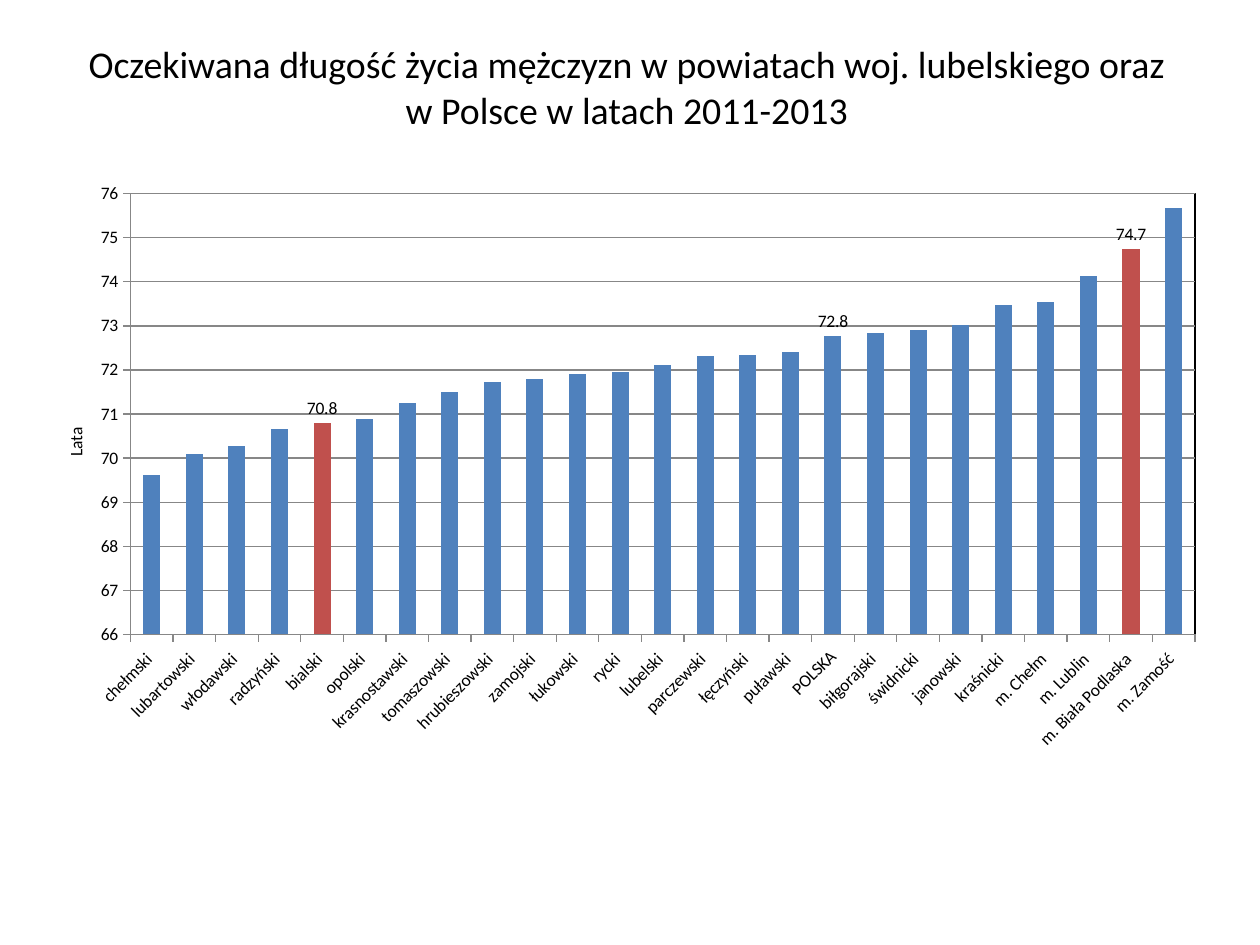
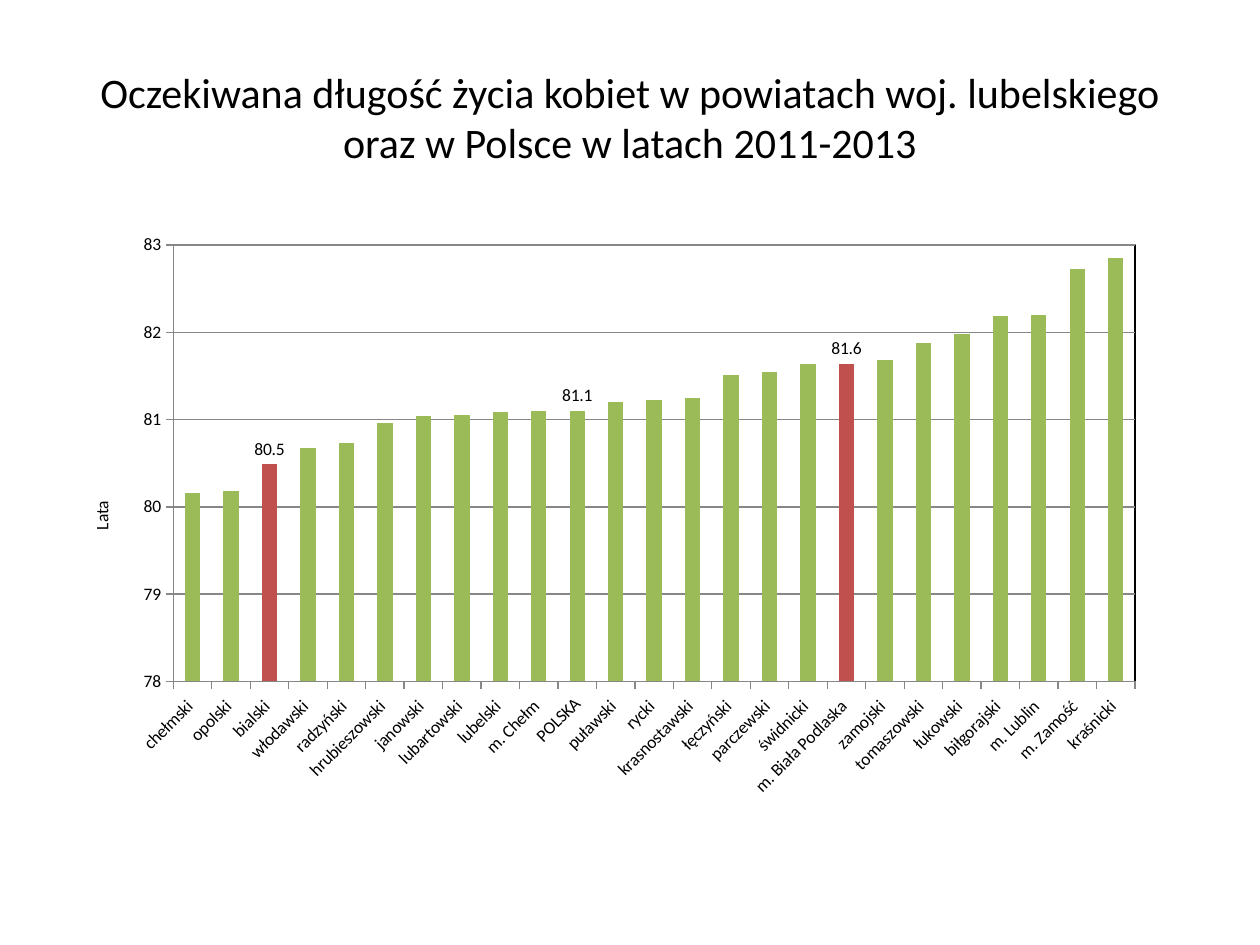
from dataclasses import dataclass

from lxml import etree
from pptx import Presentation
from pptx import util as u
from pptx.chart.data import CategoryChartData
from pptx.dml.color import RGBColor
from pptx.enum import chart as ch, text
from pptx.oxml import parse_xml
from pptx.oxml.ns import nsdecls, qn


@dataclass(frozen=True)
class Theme:
    font: str = "Calibri"
    ink: str = "000000"
    axis: str = "878787"
    men: str = "4F81BD"
    women: str = "9BBB59"
    highlight: str = "C0504D"
    chart_size: float = 10
    hairline: float = 0.75


class Deck:
    COLUMNS, ROWS = 20, 15

    def __init__(self, theme):
        self.theme = theme
        self.prs = Presentation()
        self.prs.slide_width, self.prs.slide_height = u.Inches(10), u.Inches(7.5)
        self.slide = None

    def add_slide(self):
        self.slide = self.prs.slides.add_slide(self.prs.slide_layouts[5])

    def place(self, column, row, columns, rows):
        cell_w = self.prs.slide_width / self.COLUMNS
        cell_h = self.prs.slide_height / self.ROWS
        return [u.Emu(round(n)) for n in
                (column * cell_w, row * cell_h, columns * cell_w, rows * cell_h)]

    def style_font(self, font, size):
        font.name, font.size, font.bold = self.theme.font, u.Pt(size), False
        font.color.rgb = RGBColor.from_string(self.theme.ink)

    def style_line(self, line):
        line.color.rgb = RGBColor.from_string(self.theme.axis)
        line.width = u.Pt(self.theme.hairline)

    def title(self, wording, area, size):
        heading = self.slide.shapes.title
        heading.left, heading.top, heading.width, heading.height = self.place(*area)
        frame = heading.text_frame
        frame.word_wrap = True
        frame.auto_size = text.MSO_AUTO_SIZE.NONE
        frame.vertical_anchor = text.MSO_ANCHOR.MIDDLE
        paragraph = frame.paragraphs[0]
        paragraph.alignment = text.PP_ALIGN.CENTER
        run = paragraph.add_run()
        run.text = wording
        self.style_font(run.font, size)

    def manual_layout(self, parent, position, percents, inner=False):
        for old in parent.findall(qn("c:layout")):
            parent.remove(old)
        layout = etree.SubElement(parent, qn("c:layout"))
        parent.insert(position, layout)
        manual = etree.SubElement(layout, qn("c:manualLayout"))
        settings = [("layoutTarget", "inner")] if inner else []
        settings += [("xMode", "edge"), ("yMode", "edge")]
        settings += [(key, str(round(share / 100, 3))) for key, share in zip("xywh", percents)]
        for key, setting in settings:
            etree.SubElement(manual, qn(f"c:{key}")).set("val", setting)

    def column_chart(self, area, years, color, labelled, highlighted, limits, plot, unit_at):
        data = CategoryChartData(number_format="0.0")
        data.categories = [name if name == COUNTRY else f"{name} " for name in years]
        data.add_series("Series 1", list(years.values()))
        chart = self.slide.shapes.add_chart(
            ch.XL_CHART_TYPE.COLUMN_CLUSTERED, *self.place(*area), data).chart
        chart.has_title = chart.has_legend = False
        self.style_font(chart.font, self.theme.chart_size)
        self.bars(chart.plots[0], years, color, labelled, highlighted)
        self.axes(chart, limits, unit_at)
        plot_area = chart._chartSpace.chart.plotArea
        self.manual_layout(plot_area, 0, plot, inner=True)
        plot_area.append(parse_xml(
            f'<c:spPr {nsdecls("c", "a")}><a:noFill/><a:ln w="9525"><a:solidFill>'
            f'<a:srgbClr val="{self.theme.ink}"/></a:solidFill></a:ln></c:spPr>'))

    def bars(self, plot, years, color, labelled, highlighted):
        plot.gap_width = 150
        plot.vary_by_categories = False
        series = plot.series[0]
        series.invert_if_negative = False
        series.format.fill.solid()
        series.format.fill.fore_color.rgb = RGBColor.from_string(color)
        series.data_labels.show_value = False
        series.data_labels.number_format = "0.0"
        series.data_labels.number_format_is_linked = False
        for index, county in enumerate(years):
            if county in highlighted:
                fill = series.points[index].format.fill
                fill.solid()
                fill.fore_color.rgb = RGBColor.from_string(self.theme.highlight)
            if county in labelled:
                label = series.points[index].data_label
                label.position = ch.XL_LABEL_POSITION.OUTSIDE_END

    def axes(self, chart, limits, unit_at):
        counties, lifespan = chart.category_axis, chart.value_axis
        for axis in (counties, lifespan):
            axis.major_tick_mark = ch.XL_TICK_MARK.OUTSIDE
            axis.minor_tick_mark = ch.XL_TICK_MARK.NONE
            self.style_line(axis.format.line)
            self.style_font(axis.tick_labels.font, self.theme.chart_size)
        slant = counties._element.find(qn("c:txPr")).find(qn("a:bodyPr"))
        slant.set("rot", "-2700000")
        slant.set("vert", "horz")
        lifespan.minimum_scale, lifespan.maximum_scale = limits
        lifespan.major_unit = 1
        lifespan.tick_labels.number_format = "0"
        lifespan.tick_labels.number_format_is_linked = False
        lifespan.has_major_gridlines = True
        self.style_line(lifespan.major_gridlines.format.line)
        unit = lifespan.axis_title
        run = unit.text_frame.paragraphs[0].add_run()
        run.text = "Lata"
        self.style_font(run.font, self.theme.chart_size)
        turn = unit.text_frame._txBody.find(qn("a:bodyPr"))
        turn.set("rot", "-5400000")
        turn.set("vert", "horz")
        self.manual_layout(unit._element, 1, unit_at)


COUNTRY = "POLSKA"
MEN = {
    "chełmski": 69.61, "lubartowski": 70.09, "włodawski": 70.27, "radzyński": 70.65,
    "bialski": 70.8, "opolski": 70.89, "krasnostawski": 71.26, "tomaszowski": 71.49,
    "hrubieszowski": 71.72, "zamojski": 71.8, "łukowski": 71.9, "rycki": 71.95,
    "lubelski": 72.12, "parczewski": 72.31, "łęczyński": 72.33, "puławski": 72.41,
    COUNTRY: 72.77, "biłgorajski": 72.84, "świdnicki": 72.9, "janowski": 73.02,
    "kraśnicki": 73.48, "m. Chełm": 73.53, "m. Lublin": 74.14,
    "m. Biała Podlaska": 74.74, "m. Zamość": 75.68,
}
WOMEN = {
    "chełmski": 80.16, "opolski": 80.18, "bialski": 80.49, "włodawski": 80.67,
    "radzyński": 80.73, "hrubieszowski": 80.96, "janowski": 81.04, "lubartowski": 81.05,
    "lubelski": 81.09, "m. Chełm": 81.1, COUNTRY: 81.1, "puławski": 81.2,
    "rycki": 81.22, "krasnostawski": 81.25, "łęczyński": 81.51, "parczewski": 81.54,
    "świdnicki": 81.64, "m. Biała Podlaska": 81.64, "zamojski": 81.68,
    "tomaszowski": 81.88, "łukowski": 81.98, "biłgorajski": 82.18, "m. Lublin": 82.2,
    "m. Zamość": 82.72, "kraśnicki": 82.85,
}
HIGHLIGHTED = {"bialski", "m. Biała Podlaska"}
LABELLED = HIGHLIGHTED | {COUNTRY}
HEADING = "Oczekiwana długość życia {} w powiatach woj. lubelskiego oraz w Polsce w latach 2011-2013"


def main():
    theme = Theme()
    deck = Deck(theme)

    deck.add_slide()
    deck.title(HEADING.format("mężczyzn"), (1, 0.6, 17.9, 1.54), 21.6)
    deck.column_chart((0.71, 2.46, 18.9, 11.82), MEN, theme.men, LABELLED, HIGHLIGHTED,
                      limits=(66, 76), plot=(7.2, 5.2, 89.4, 59.2), unit_at=(1.4, 36.2))

    deck.add_slide()
    deck.title(HEADING.format("kobiet"), (1, 0.6, 18, 2.5), 24)
    deck.column_chart((0.99, 2.93, 17.98, 11.02), WOMEN, theme.women, LABELLED, HIGHLIGHTED,
                      limits=(78, 83), plot=(9.8, 8.7, 84.9, 62.9), unit_at=(2.2, 45.1))

    deck.prs.save("out.pptx")


if __name__ == "__main__":
    main()
